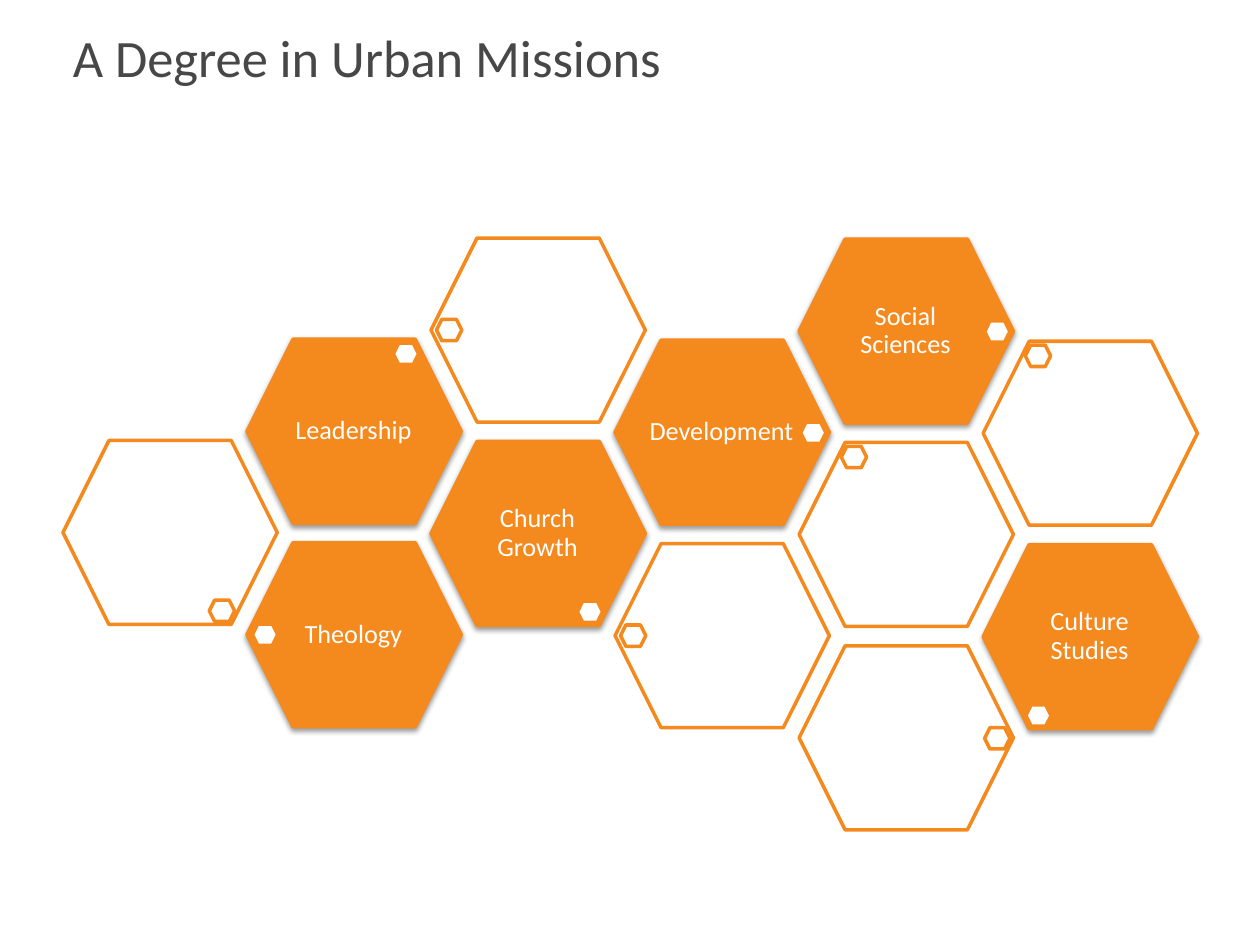
from dataclasses import dataclass, field
from enum import Enum
from typing import Any, Optional

import lxml.etree
import pptx
import pptx.dml.color
import pptx.enum.shapes
import pptx.enum.text
import pptx.oxml.ns
import pptx.util

Cm = pptx.util.Cm
Pt = pptx.util.Pt
RGB = pptx.dml.color.RGBColor
qn = pptx.oxml.ns.qn


@dataclass(frozen=True)
class Theme:
    orange: RGB = RGB(0xF4, 0x89, 0x1E)
    white: RGB = RGB(0xFF, 0xFF, 0xFF)
    title_ink: RGB = RGB(0x47, 0x47, 0x47)
    font: str = "Calibri"
    title_size: int = 30
    label_size: int = 15
    outline: int = 2


THEME = Theme()


# Honeycomb geometry, in centimetres
LEFT, TOP = 1.27, 4.78
COLUMN_STEP, HALF_ROW = 3.71, 2.05
COLUMN_DRIFT = 0.01
CELL_SIZE = (4.32, 3.71)
SPOT_SIZE = (0.51, 0.43)
LABEL_INSET = (0.66, 0.57)
LABEL_SIZE = (2.97, 2.57)


class Spot(Enum):
    """Offset of the small hexagon from its cell's top-left corner."""
    LEFT = (0.11, 1.64)
    RIGHT = (3.74, 1.65)
    TOP_LEFT = (0.85, 0.08)
    TOP_RIGHT = (2.95, 0.08)
    BOTTOM_LEFT = (0.86, 3.23)
    BOTTOM_RIGHT = (2.95, 3.22)


@dataclass(frozen=True)
class Cell:
    column: int
    half_row: int
    spot: Spot
    label: Optional[str] = None


@dataclass(frozen=True)
class Box:
    left: float
    top: float
    width: float
    height: float

    def lengths(self) -> list:
        return [Cm(value) for value in (self.left, self.top, self.width, self.height)]


@dataclass(frozen=True)
class TextStyle:
    font: dict
    para: dict = field(default_factory=dict)
    frame: dict = field(default_factory=dict)


TITLE_STYLE = TextStyle(
    font={"name": THEME.font, "size": Pt(THEME.title_size)},
)
LABEL_STYLE = TextStyle(
    font={"name": THEME.font, "size": Pt(THEME.label_size)},
    para={"alignment": pptx.enum.text.PP_ALIGN.CENTER,
          "line_spacing": 0.9, "space_after": Pt(5.25)},
    frame={"margin_left": 0, "margin_right": 0,
           "margin_top": Cm(0.05), "margin_bottom": Cm(0.05)},
)

CELLS = [
    Cell(1, 3, Spot.LEFT, "Theology"),
    Cell(0, 2, Spot.BOTTOM_RIGHT),
    Cell(2, 2, Spot.BOTTOM_RIGHT, "Church Growth"),
    Cell(3, 3, Spot.LEFT),
    Cell(1, 1, Spot.TOP_RIGHT, "Leadership"),
    Cell(2, 0, Spot.LEFT),
    Cell(3, 1, Spot.RIGHT, "Development"),
    Cell(4, 2, Spot.TOP_LEFT),
    Cell(4, 0, Spot.RIGHT, "Social Sciences"),
    Cell(5, 1, Spot.TOP_LEFT),
    Cell(5, 3, Spot.BOTTOM_LEFT, "Culture Studies"),
    Cell(4, 4, Spot.RIGHT),
]


def apply_format(target: Any, values: dict) -> None:
    for name, value in values.items():
        setattr(target, name, value)


def add_text(page: Any, box: Box, text: str, style: TextStyle, color: RGB) -> None:
    frame = page.shapes.add_textbox(*box.lengths()).text_frame
    apply_format(frame, {
        "word_wrap": True,
        "vertical_anchor": pptx.enum.text.MSO_ANCHOR.MIDDLE,
        **style.frame,
    })
    para = frame.paragraphs[0]
    apply_format(para, style.para)
    span = para.add_run()
    span.text = text
    apply_format(span.font, style.font)
    span.font.color.rgb = color


def add_hexagon(page: Any, box: Box, fill: RGB) -> Any:
    shape = page.shapes.add_shape(
        pptx.enum.shapes.MSO_SHAPE.HEXAGON, *box.lengths())
    shape.adjustments[0] = 0.25
    shape.shadow.inherit = False
    shape.fill.solid()
    shape.fill.fore_color.rgb = fill
    shape.line.color.rgb = THEME.orange
    shape.line.width = Pt(THEME.outline)
    return shape


def add_alpha(color: Any, percent: int) -> None:
    lxml.etree.SubElement(color, qn("a:alpha"), val=str(percent * 1000))


def add_soft_shadow(shape: Any) -> None:
    effects = shape.element.spPr.find(qn("a:effectLst"))
    shadow = lxml.etree.SubElement(
        effects, qn("a:outerShdw"), blurRad=str(Pt(3.1)), dist=str(Pt(1.6)),
        dir="5400000", rotWithShape="0")
    add_alpha(lxml.etree.SubElement(shadow, qn("a:srgbClr"), val="000000"), 38)


def add_cell(page: Any, cell: Cell) -> None:
    left = LEFT + cell.column * COLUMN_STEP
    top = TOP + cell.half_row * HALF_ROW + cell.column * COLUMN_DRIFT
    box = Box(left, top, *CELL_SIZE)

    # Large hexagon, filled when it carries a label
    if cell.label:
        add_soft_shadow(add_hexagon(page, box, THEME.orange))
        label_box = Box(left + LABEL_INSET[0], top + LABEL_INSET[1], *LABEL_SIZE)
        add_text(page, label_box, cell.label, LABEL_STYLE, THEME.white)
    else:
        shape = add_hexagon(page, box, THEME.white)
        add_alpha(shape.element.spPr.find(qn("a:solidFill"))[0], 90)

    # Small hexagon near the edge
    dx, dy = cell.spot.value
    add_hexagon(page, Box(left + dx, top + dy, *SPOT_SIZE), THEME.white)


def main() -> None:
    deck = pptx.Presentation()
    deck.slide_width, deck.slide_height = Cm(25.4), Cm(19.05)
    page = deck.slides.add_slide(deck.slide_layouts[6])

    # Title
    add_text(page, Box(1.22, 0.2, 23.34, 1.9), "A Degree in Urban Missions",
             TITLE_STYLE, THEME.title_ink)

    # Honeycomb of subjects
    for cell in CELLS:
        add_cell(page, cell)

    deck.save("out.pptx")


if __name__ == "__main__":
    main()
